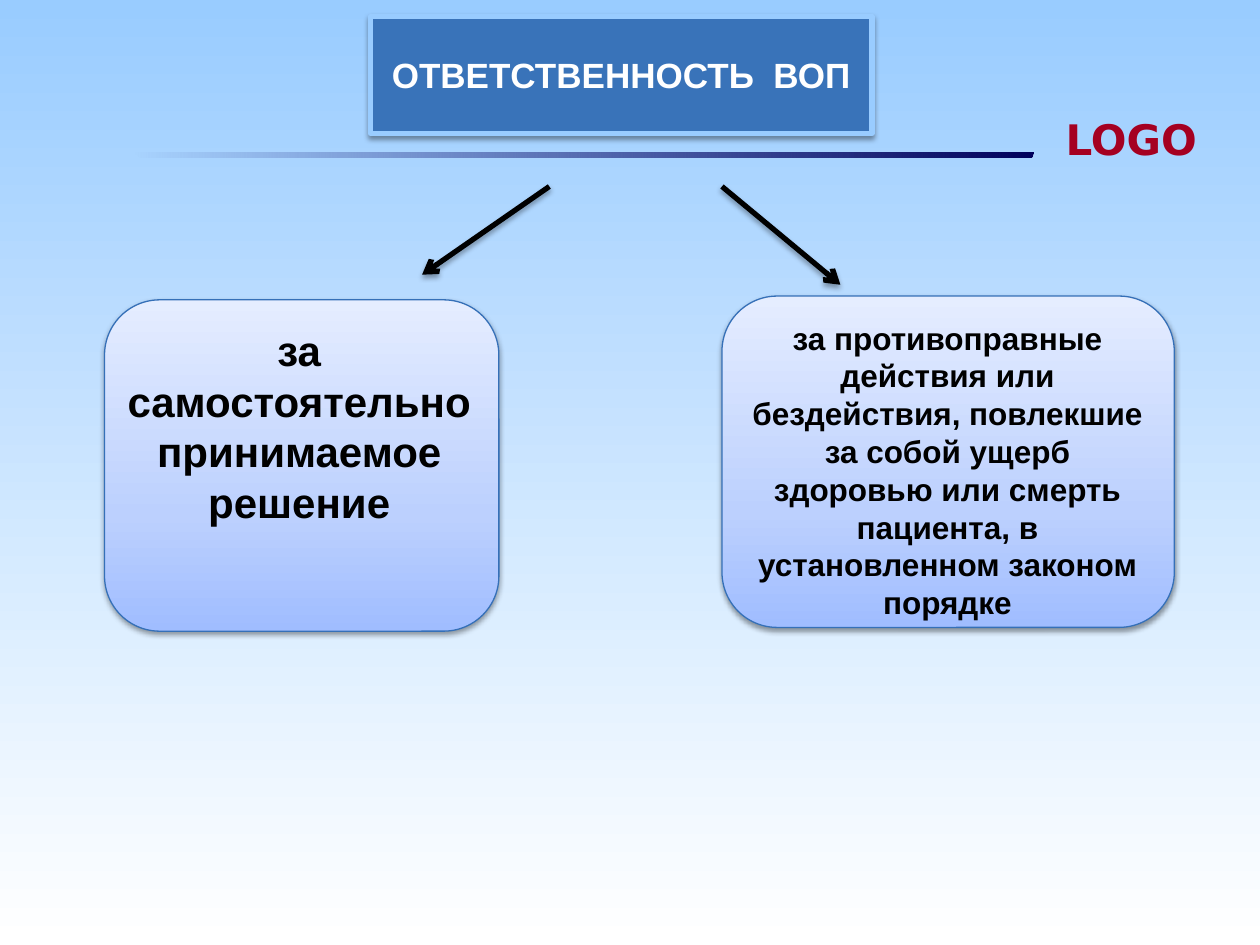
from lxml import etree
from pptx import Presentation
from pptx.dml.color import RGBColor
from pptx.enum.shapes import MSO_CONNECTOR, MSO_SHAPE
from pptx.enum.text import MSO_ANCHOR, PP_ALIGN
from pptx.oxml.ns import qn
from pptx.util import Inches, Pt

RECTANGLE = MSO_SHAPE.RECTANGLE
ROUNDED = MSO_SHAPE.ROUNDED_RECTANGLE
STRAIGHT = MSO_CONNECTOR.STRAIGHT
CENTER = PP_ALIGN.CENTER
LEFT = PP_ALIGN.LEFT
MIDDLE = MSO_ANCHOR.MIDDLE
TOP = MSO_ANCHOR.TOP

BACKGROUND_STOPS = [(0, "99CCFF", 100), (100, "FFFFFF", 100)]
RULE_STOPS = [(0, "000066", 0), (100, "00005C", 100)]
CARD_STOPS = [(0, "A0BDFF", 100), (35, "BCD0FE", 100), (100, "E5EDFF", 100)]


def color(value):
    return RGBColor.from_string(value)


def add_color_xml(parent, value, alpha):
    node = etree.SubElement(parent, qn("a:srgbClr"), val=value)
    if alpha < 100:
        etree.SubElement(node, qn("a:alpha"), val=str(alpha * 1000))


def set_gradient(fill, element, stops, angle):
    """Fill with (position %, colour, opacity %) stops; angle is counterclockwise."""
    fill.gradient()
    fill.gradient_angle = angle
    stop_list = element.find(".//" + qn("a:gsLst"))
    stop_list.clear()
    for position, value, alpha in stops:
        stop = etree.SubElement(stop_list, qn("a:gs"), pos=str(position * 1000))
        add_color_xml(stop, value, alpha)


def set_shadow(effects, alpha, distance):
    shadow = etree.SubElement(
        effects, qn("a:outerShdw"), blurRad=str(Pt(3.1)), dist=str(Pt(distance)),
        dir="5400000", rotWithShape="0")
    add_color_xml(shadow, "000000", alpha)


def write_text(frame, text, size=18, font="Arial", text_color="000000",
               align=CENTER, anchor=TOP):
    frame.word_wrap = True
    frame.vertical_anchor = anchor
    paragraph = frame.paragraphs[0]
    paragraph.alignment = align
    run = paragraph.add_run()
    run.text = text
    run.font.name = font
    run.font.size = Pt(size)
    run.font.bold = True
    run.font.color.rgb = color(text_color)


class SlideBuilder:
    def __init__(self, slide):
        self.slide = slide
        self.shapes = slide.shapes

    def background(self, stops):
        set_gradient(self.slide.background.fill, self.slide.element, stops, 270)

    def rule(self, points, stops):
        start, *rest = [(Inches(x), Inches(y)) for x, y in points]
        builder = self.shapes.build_freeform(*start)
        builder.add_line_segments(rest, close=True)
        shape = builder.convert_to_shape()
        shape.shadow.inherit = False
        shape.line.fill.background()
        set_gradient(shape.fill, shape.element, stops, 0)

    def box(self, kind, place, line_color, line_width):
        shape = self.shapes.add_shape(kind, *map(Inches, place))
        shape.line.color.rgb = color(line_color)
        shape.line.width = Pt(line_width)
        shape.shadow.inherit = False
        set_shadow(shape.element.spPr.find(qn("a:effectLst")), 38, 1.6)
        return shape

    def card(self, place):
        shape = self.box(ROUNDED, place, "3570B8", 0.75)
        set_gradient(shape.fill, shape.element, CARD_STOPS, 90)

    def title(self, place, text):
        shape = self.box(RECTANGLE, place, "99CCFF", 3)
        shape.fill.solid()
        shape.fill.fore_color.rgb = color("3973B9")
        write_text(shape.text_frame, text, size=20, text_color="FFFFFF", anchor=MIDDLE)

    def arrow(self, start, end):
        connector = self.shapes.add_connector(STRAIGHT, *map(Inches, start + end))
        connector.line.color.rgb = color("000000")
        connector.line.width = Pt(3)
        properties = connector._element.spPr
        etree.SubElement(properties.find(qn("a:ln")), qn("a:tailEnd"), type="arrow")
        set_shadow(etree.SubElement(properties, qn("a:effectLst")), 35, 1.8)

    def text(self, place, text, **style):
        text_box = self.shapes.add_textbox(*map(Inches, place))
        write_text(text_box.text_frame, text, **style)


def main():
    presentation = Presentation()
    presentation.slide_width = Inches(10)
    presentation.slide_height = Inches(7.5)
    builder = SlideBuilder(presentation.slides.add_slide(presentation.slide_layouts[6]))

    builder.background(BACKGROUND_STOPS)
    builder.rule([(8.2, 1.21), (1.05, 1.21), (1.11, 1.25), (8.18, 1.25)], RULE_STOPS)
    builder.text((8.36, 0.85, 1.41, 0.5), "LOGO", size=24, font="DejaVu Sans",
                 text_color="A50021", align=LEFT)
    builder.card((5.73, 2.35, 3.59, 2.63))
    builder.card((0.83, 2.38, 3.13, 2.63))
    builder.title((2.94, 0.13, 3.98, 0.93), "ОТВЕТСТВЕННОСТЬ  ВОП")
    builder.arrow((4.36, 1.48), (3.35, 2.18))
    builder.arrow((5.73, 1.48), (6.67, 2.26))
    builder.text((0.86, 2.53, 3.03, 2.12), "за самостоятельно принимаемое решение", size=24)
    builder.text((5.84, 2.48, 3.36, 2.52),
                 "за противоправные действия или бездействия, повлекшие за собой ущерб "
                 "здоровью или смерть пациента, в установленном законом порядке")
    presentation.save("out.pptx")


if __name__ == "__main__":
    main()
